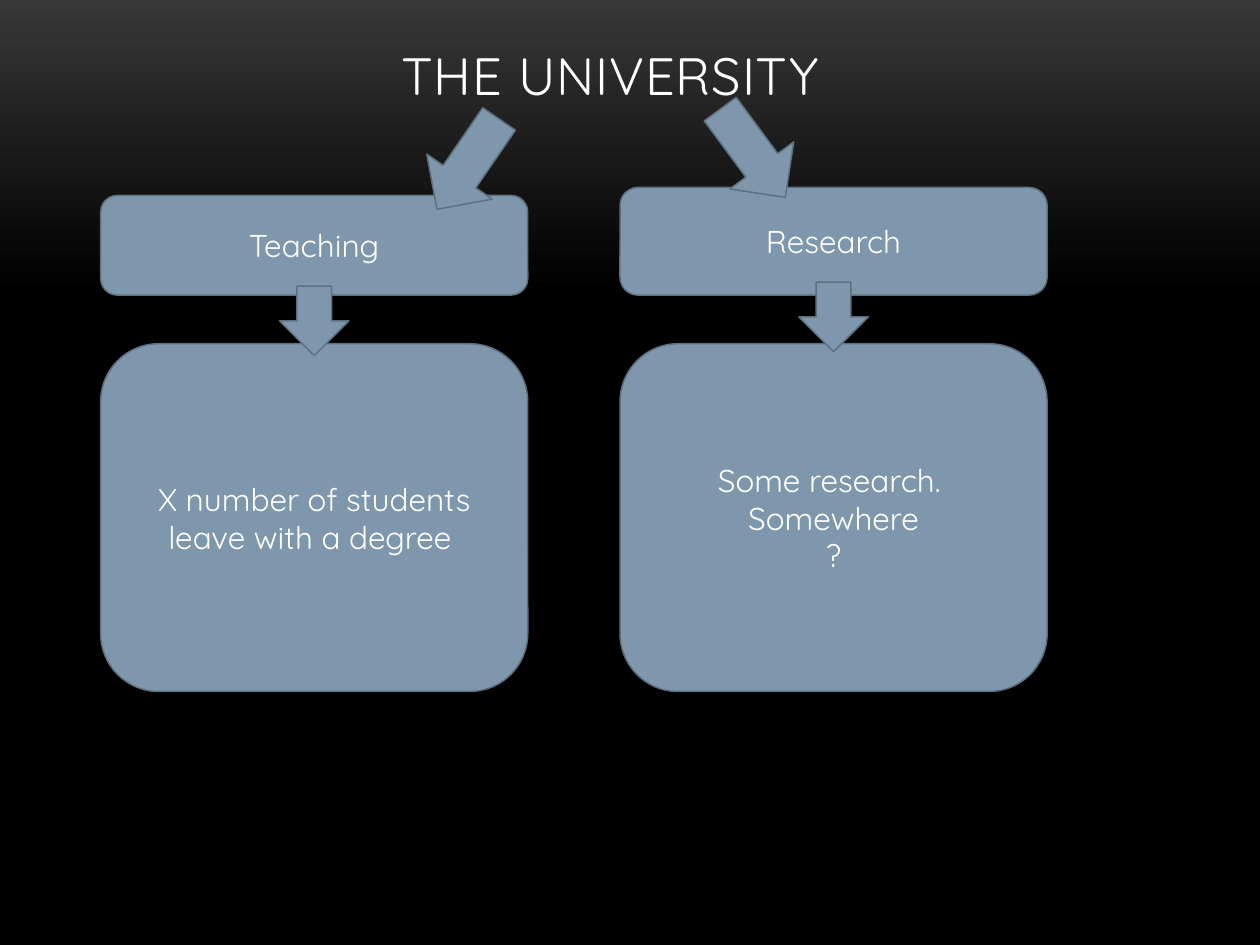
"""Builds a slide that splits the university into teaching and research."""
from pptx import Presentation
from pptx.dml.color import RGBColor
from pptx.enum.shapes import MSO_SHAPE
from pptx.enum.text import MSO_ANCHOR, MSO_AUTO_SIZE, PP_ALIGN
from pptx.util import Cm, Pt

ROUND = MSO_SHAPE.ROUNDED_RECTANGLE
RIGHT = MSO_SHAPE.RIGHT_ARROW
DOWN = MSO_SHAPE.DOWN_ARROW
TOP, MIDDLE = MSO_ANCHOR.TOP, MSO_ANCHOR.MIDDLE
CENTER = PP_ALIGN.CENTER
NO_FIT = MSO_AUTO_SIZE.NONE

WHITE = RGBColor(0xFF, 0xFF, 0xFF)
BLACK = RGBColor(0x00, 0x00, 0x00)
GREY = RGBColor(0x38, 0x38, 0x38)
BLUE = RGBColor(0x7E, 0x97, 0xAD)
SLATE = RGBColor(0x5D, 0x70, 0x80)

WIDTH = 8.61
TIP = 1.4


def write(frame, text, size=18, anchor=MIDDLE, space=0):
    frame.word_wrap = True
    frame.auto_size = NO_FIT
    frame.vertical_anchor = anchor
    frame.text = text
    for para in frame.paragraphs:
        para.alignment = CENTER
        for run in para.runs:
            run.font.name = "Quicksand"
            run.font.size = Pt(size)
            run.font.color.rgb = WHITE
            if space:
                run.font._element.set("spc", str(int(space * 100)))


class Deck:
    def __init__(self):
        self.prs = Presentation()
        self.prs.slide_width, self.prs.slide_height = Cm(25.4), Cm(19.05)
        self.slide = self.prs.slides.add_slide(self.prs.slide_layouts[5])

    def shade(self):
        fill = self.slide.background.fill
        fill.gradient()
        fill.gradient_angle = 270
        for stop, color, place in zip(fill.gradient_stops, (GREY, BLACK), (0, 0.31)):
            stop.color.rgb = color
            stop.position = place

    def title(self, text, left, top, width, height):
        shape = self.slide.shapes.title
        shape.left, shape.top = Cm(left), Cm(top)
        shape.width, shape.height = Cm(width), Cm(height)
        write(shape.text_frame, text, size=30, anchor=TOP, space=0.5)

    def shape(self, kind, left, top, width, height):
        shape = self.slide.shapes.add_shape(
            kind, Cm(left), Cm(top), Cm(width), Cm(height))
        shape.shadow.inherit = False
        shape.fill.solid()
        shape.fill.fore_color.rgb = BLUE
        shape.line.color.rgb = SLATE
        shape.line.width = Pt(0.85)
        return shape

    def box(self, text, left, top, height):
        write(self.shape(ROUND, left, top, WIDTH, height).text_frame, text)

    def arrow(self, kind, left, top, width, height, turn=0):
        self.shape(kind, left, top, width, height).rotation = turn


def main():
    deck = Deck()
    deck.shade()
    deck.title("THE UNIVERSITY", 2.29, 0.74, 20.02, 3.18)
    columns = (
        (2.03, "Teaching", 3.94, "X number of students leave with a degree ",
         5.77, (8.33, 2.51, 124.5)),
        (12.5, "Research", 3.78, "Some research. \vSomewhere\n?",
         5.69, (14.07, 2.29, 53.6)),
    )
    for left, head, top, body, drop, (x, y, turn) in columns:
        deck.box(head, left, top, 5.95 - top)
        deck.box(body, left, 6.93, 7.01)
        deck.arrow(RIGHT, x, y, 2.21, 1.6, turn)
        deck.arrow(DOWN, left + (WIDTH - TIP) / 2, drop, TIP, TIP)
    deck.prs.save("out.pptx")


if __name__ == "__main__":
    main()
